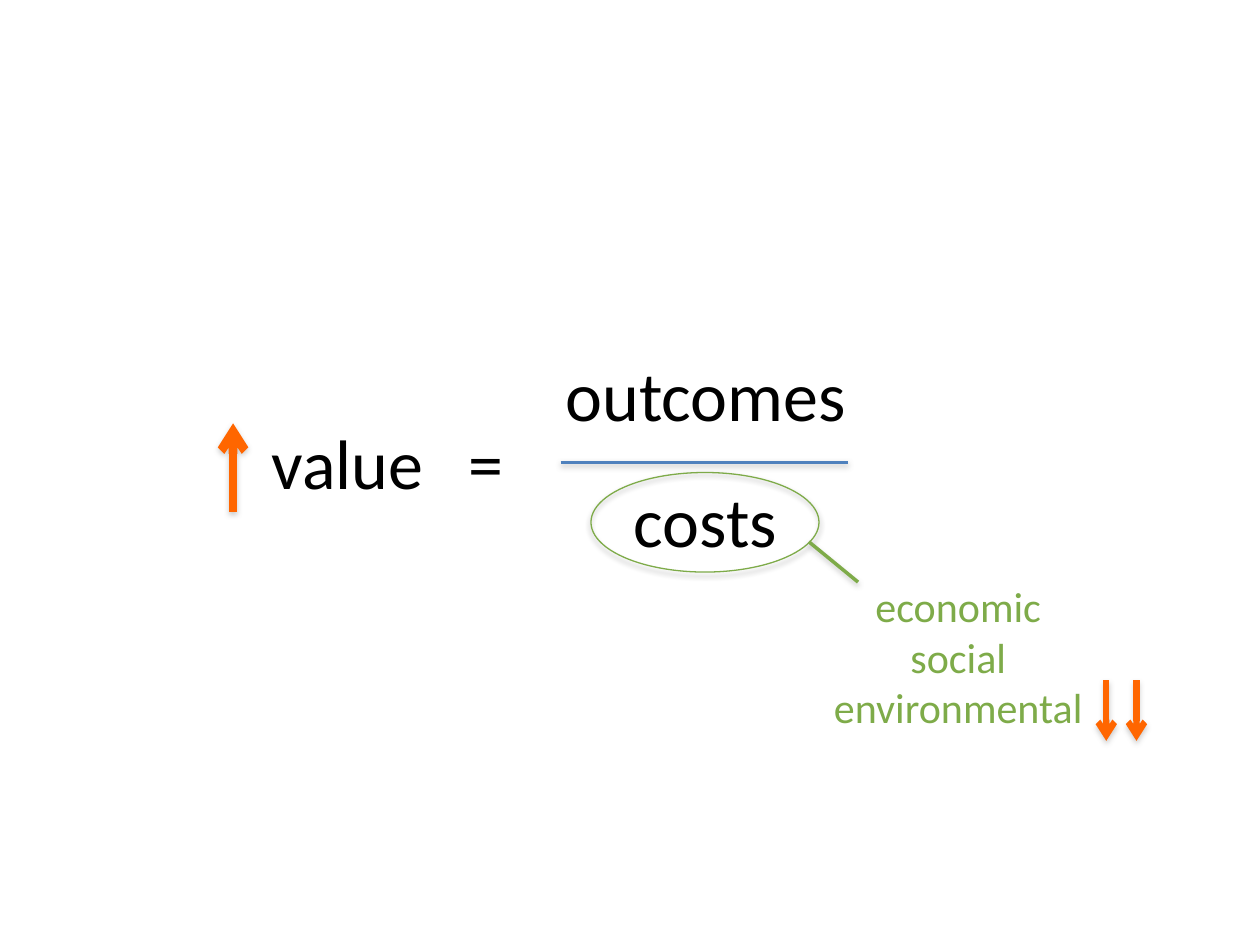
import pptx
import pptx.util
import pptx.dml.color
import pptx.enum.shapes
import pptx.enum.text
import pptx.oxml
import pptx.oxml.ns

Inches, Pt = pptx.util.Inches, pptx.util.Pt
ALIGN = pptx.enum.text.PP_ALIGN
FONT = "Calibri"
COLORS = {"ink": "000000", "green": "7EAB49", "blue": "4F81BD",
          "orange": "FF6600", "gray": "808080"}

# Content: lines, left, top, width, height, size, color, align, spacing, wrap
TEXTS = [
    (["value\t="], 2.06, 3.28, 2.3, 0.77, 40, "ink", ALIGN.LEFT, 1, True),
    (["outcomes", "costs"], 4.37, 2.41, 2.46, 2.06, 40, "ink",
     ALIGN.CENTER, 1.5, False),
    (["economic", "social", "environmental"], 6.5, 4.56, 2.21, 1.31, 24,
     "green", ALIGN.CENTER, 1, False),
]
EQUALS_TAB = 1.56
RING = (4.69, 3.75, 1.81, 0.79)

# Lines: start, end, color, width, arrow
BAR = ((4.45, 3.67), (6.73, 3.67), "blue", 2, False)
LEADER = ((6.42, 4.3), (6.81, 4.62), "green", 2, False)
RISE = ((1.85, 4.06), (1.85, 3.36), "orange", 5, True)
FALLS = [((x, 5.4), (x, 5.88), "orange", 3.5, True) for x in (8.78, 9.02)]


def rgb(name):
    return pptx.dml.color.RGBColor.from_string(COLORS[name])


def add_xml(parent, tag, body):
    xml = f'<a:{tag} {pptx.oxml.ns.nsdecls("a")}{body}'
    parent.append(pptx.oxml.parse_xml(xml))


def add_shadow(shape, color, alpha, dist):
    add_xml(shape.element.spPr, "effectLst",
            f'><a:outerShdw blurRad="{Pt(3.1)}" dist="{Pt(dist)}" '
            f'dir="5400000" rotWithShape="0"><a:srgbClr val="{COLORS[color]}">'
            f'<a:alpha val="{alpha * 1000}"/></a:srgbClr></a:outerShdw>'
            '</a:effectLst>')


def add_text(slide, lines, left, top, width, height, size, color, align,
             spacing, wrap):
    box = slide.shapes.add_textbox(*map(Inches, (left, top, width, height)))
    frame = box.text_frame
    frame.word_wrap = wrap
    frame.text = "\n".join(lines)
    for para in frame.paragraphs:
        para.alignment = align
        para.line_spacing = spacing
        for run in para.runs:
            run.font.name = FONT
            run.font.size = Pt(size)
            run.font.color.rgb = rgb(color)
    return box


def add_line(slide, start, end, color, width, arrow):
    line = slide.shapes.add_connector(
        pptx.enum.shapes.MSO_CONNECTOR.STRAIGHT, *map(Inches, start + end))
    line.line.color.rgb = rgb(color)
    line.line.width = Pt(width)
    if arrow:
        add_xml(line.line._get_or_add_ln(), "tailEnd", ' type="arrow"/>')
    add_shadow(line, "gray", 38, 1.6)


def add_ring(slide):
    ring = slide.shapes.add_shape(
        pptx.enum.shapes.MSO_SHAPE.OVAL, *map(Inches, RING))
    ring.fill.background()
    ring.line.color.rgb = rgb("green")
    ring.line.width = Pt(0.75)
    add_shadow(ring, "ink", 35, 1.8)


def main():
    deck = pptx.Presentation()
    deck.slide_width, deck.slide_height = Inches(10), Inches(7.5)
    slide = deck.slides.add_slide(deck.slide_layouts[6])

    # Equation: value = outcomes / costs
    value, *_ = [add_text(slide, *item) for item in TEXTS]
    add_xml(value.text_frame.paragraphs[0]._p.get_or_add_pPr(), "tabLst",
            f'><a:tab pos="{Inches(EQUALS_TAB)}" algn="l"/></a:tabLst>')

    # Ring around costs, fraction bar, leader and arrows
    add_ring(slide)
    for item in [BAR, LEADER, *FALLS, RISE]:
        add_line(slide, *item)

    deck.save("out.pptx")


if __name__ == "__main__":
    main()
